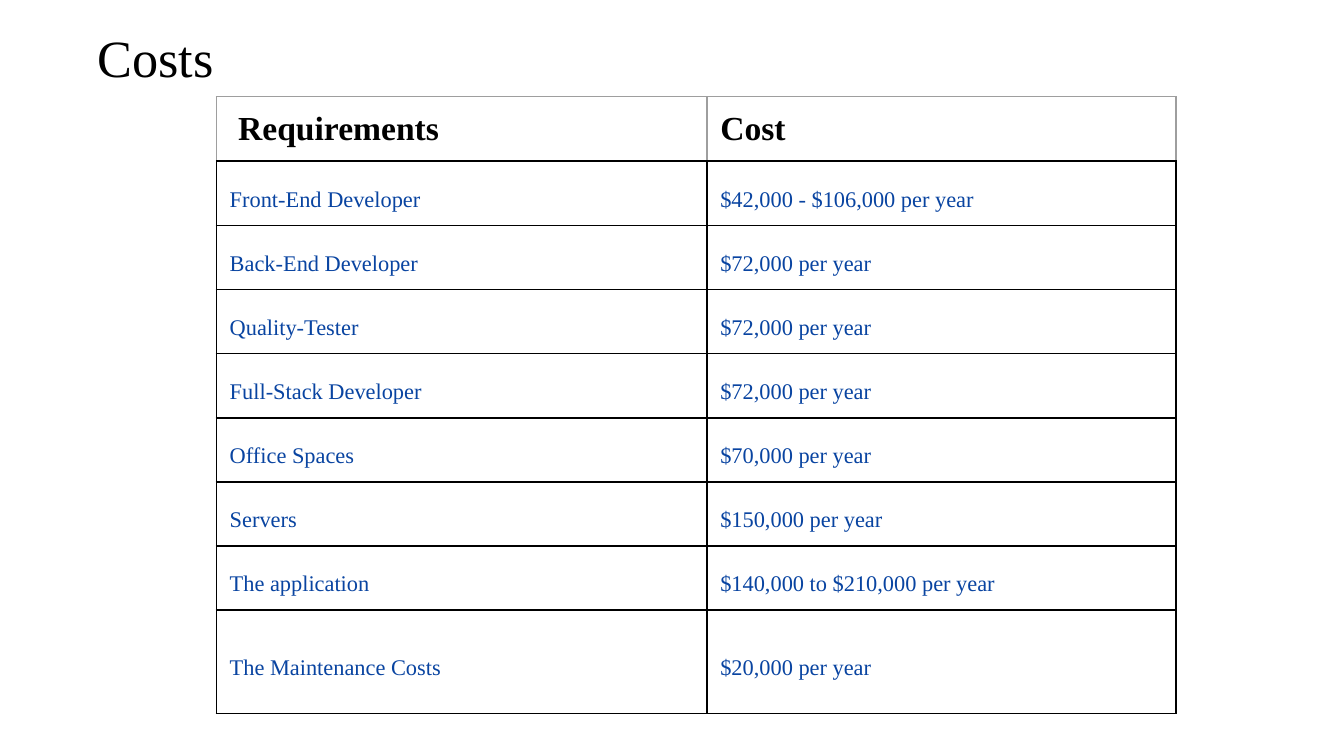
import dataclasses

import lxml.etree
import pptx
import pptx.dml.color
import pptx.enum.text
import pptx.oxml.ns
import pptx.util

BLACK = pptx.dml.color.RGBColor(0x00, 0x00, 0x00)
GREY = pptx.dml.color.RGBColor(0x9E, 0x9E, 0x9E)
BLUE = pptx.dml.color.RGBColor(0x09, 0x44, 0xA1)
FONT = "Times New Roman"
INSET = pptx.util.Emu(91425)


@dataclasses.dataclass(frozen=True)
class CellStyle:
    size: float
    color: pptx.dml.color.RGBColor
    bold: bool
    spacing: float
    edge: pptx.dml.color.RGBColor
    edge_width: float


HEADER = CellStyle(18, BLACK, True, 1.0, GREY, 0.75)
BODY = CellStyle(12, BLUE, False, 1.5, BLACK, 1)

ROWS = [
    (" Requirements", "Cost"),
    ("Front-End Developer", "$42,000 - $106,000 per year"),
    ("Back-End Developer", "$72,000 per year"),
    ("Quality-Tester", "$72,000 per year"),
    ("Full-Stack Developer", "$72,000 per year"),
    ("Office Spaces", "$70,000 per year"),
    ("Servers", "$150,000 per year"),
    ("The application", "$140,000 to $210,000 per year"),
    ("The Maintenance Costs", "$20,000 per year"),
]
COL_WIDTHS = [3.65, 3.49]
ROW_HEIGHTS = [0.48] + [0.47] * (len(ROWS) - 2) + [0.77]


def format_text(p, size: float, color, bold: bool) -> None:
    for r in p.runs:
        r.font.name = FONT
        r.font.size = pptx.util.Pt(size)
        r.font.bold = bold
        r.font.color.rgb = color


def set_border(cell, edge: str, color, width: float) -> None:
    qn = pptx.oxml.ns.qn
    tc_pr = cell._tc.get_or_add_tcPr()
    ln = lxml.etree.SubElement(tc_pr, qn(f"a:{edge}"), w=str(pptx.util.Pt(width)))
    fill = lxml.etree.SubElement(ln, qn("a:solidFill"))
    lxml.etree.SubElement(fill, qn("a:srgbClr"), val=str(color))


def draw_cell(cell, text: str, style: CellStyle) -> None:
    cell.text_frame.text = text
    cell.margin_left = cell.margin_right = INSET
    cell.margin_top = cell.margin_bottom = INSET
    p = cell.text_frame.paragraphs[0]
    p.line_spacing = style.spacing
    format_text(p, style.size, style.color, style.bold)
    for edge in ("lnL", "lnR", "lnT"):
        set_border(cell, edge, style.edge, style.edge_width)
    set_border(cell, "lnB", BLACK, 1)
    cell.fill.background()


def draw_title(s, text: str) -> None:
    sp = s.shapes.title
    sp.left, sp.top, sp.width, sp.height = map(pptx.util.Inches, (0.53, 0.09, 9.32, 0.63))
    tf = sp.text_frame
    tf.text = text
    tf.auto_size = pptx.enum.text.MSO_AUTO_SIZE.NONE
    tf.vertical_anchor = pptx.enum.text.MSO_ANCHOR.TOP
    tf.margin_left = tf.margin_right = tf.margin_top = tf.margin_bottom = INSET
    p = tf.paragraphs[0]
    p.alignment = pptx.enum.text.PP_ALIGN.LEFT
    format_text(p, 28, BLACK, False)


def draw_costs(s) -> None:
    box = map(pptx.util.Inches, (1.61, 0.72, sum(COL_WIDTHS), sum(ROW_HEIGHTS)))
    table = s.shapes.add_table(len(ROWS), len(COL_WIDTHS), *box).table
    table.first_row = table.horz_banding = False
    for column, width in zip(table.columns, COL_WIDTHS):
        column.width = pptx.util.Inches(width)
    for i, (row, height) in enumerate(zip(table.rows, ROW_HEIGHTS)):
        row.height = pptx.util.Inches(height)
        for cell, text in zip(row.cells, ROWS[i]):
            draw_cell(cell, text, BODY if i else HEADER)
    # The taller last row is centred
    for cell in table.rows[len(ROWS) - 1].cells:
        cell.vertical_anchor = pptx.enum.text.MSO_ANCHOR.MIDDLE


def main() -> None:
    prs = pptx.Presentation()
    # Widescreen, 16 by 9
    prs.slide_width = pptx.util.Inches(10)
    prs.slide_height = prs.slide_width * 9 // 16
    s = prs.slides.add_slide(prs.slide_layouts.get_by_name("Title Only"))
    draw_title(s, " Costs")
    draw_costs(s)
    prs.save("out.pptx")


if __name__ == "__main__":
    main()
